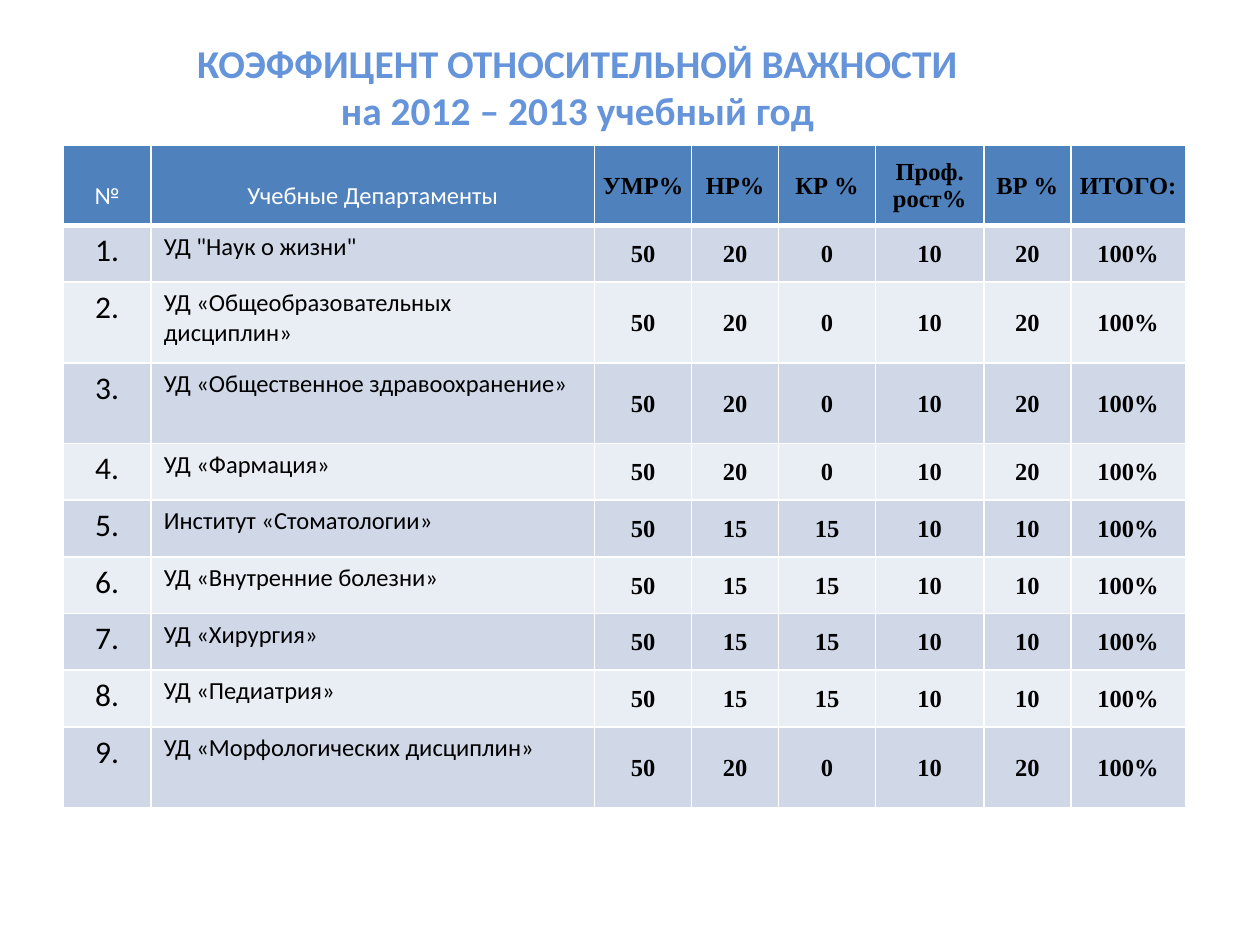
from lxml.etree import SubElement
from pptx import Presentation
from pptx.dml.color import RGBColor
from pptx.enum.text import MSO_ANCHOR, PP_ALIGN
from pptx.oxml.ns import qn
from pptx.util import Inches, Pt

TITLE_BLUE = RGBColor(0x65, 0x94, 0xDA)
HEADER_BLUE = RGBColor(0x4F, 0x81, 0xBD)
ODD_ROW = RGBColor(0xD0, 0xD8, 0xE8)
EVEN_ROW = RGBColor(0xE9, 0xED, 0xF4)
WHITE = RGBColor(0xFF, 0xFF, 0xFF)
BLACK = RGBColor(0, 0, 0)

TITLE_LINES = ["КОЭФФИЦЕНТ ОТНОСИТЕЛЬНОЙ ВАЖНОСТИ", "на 2012 – 2013 учебный год"]
HEADERS = ["№", "Учебные Департаменты", "УМР%", "НР%", "КР %", "Проф. рост%", "ВР %", "ИТОГО:"]
GENERAL = ["50", "20", "0", "10", "20", "100%"]
CLINICAL = ["50", "15", "15", "10", "10", "100%"]
DEPARTMENTS = [
    ("УД \"Наук о жизни\"", GENERAL),
    ("УД «Общеобразовательных дисциплин»", GENERAL),
    ("УД «Общественное здравоохранение»", GENERAL),
    ("УД «Фармация»", GENERAL),
    ("Институт «Стоматологии»", CLINICAL),
    ("УД «Внутренние болезни»", CLINICAL),
    ("УД «Хирургия»", CLINICAL),
    ("УД «Педиатрия»", CLINICAL),
    ("УД «Морфологических дисциплин»", GENERAL),
]
COLUMN_WIDTHS = [0.7, 3.52, 0.77, 0.69, 0.77, 0.86, 0.69, 0.91]
SHORT_ROW, TALL_ROW = 0.45, 0.64
TALL_ROWS = {0, 2, 3, 9}


def add_run(paragraph, text, size, color, font="Calibri", bold=False):
    run = paragraph.add_run()
    run.text = text
    run.font.size = Pt(size)
    run.font.name = font
    run.font.bold = bold
    run.font.color.rgb = color


def set_borders(cell, bottom_width):
    properties = cell._tc.get_or_add_tcPr()
    for side, width in (("L", 1), ("R", 1), ("T", 1), ("B", bottom_width)):
        line = SubElement(properties, qn(f"a:ln{side}"), w=str(Pt(width)))
        fill = SubElement(line, qn("a:solidFill"))
        SubElement(fill, qn("a:srgbClr"), val=str(WHITE))


def fill_cell(cell, text, row, column):
    is_header = row == 0
    is_value = column >= 2
    set_borders(cell, 3 if is_header else 1)
    cell.fill.solid()
    cell.fill.fore_color.rgb = HEADER_BLUE if is_header else ODD_ROW if row % 2 else EVEN_ROW
    paragraph = cell.text_frame.paragraphs[0]
    paragraph.alignment = PP_ALIGN.CENTER if is_header or column != 1 else PP_ALIGN.LEFT
    if is_value:
        cell.vertical_anchor = MSO_ANCHOR.MIDDLE
        cell.margin_left = cell.margin_right = cell.margin_top = Inches(0.01)
        cell.margin_bottom = 0
        add_run(paragraph, text, 14, BLACK, "Times New Roman", True)
    elif is_header:
        cell.margin_top = Inches(0.29)
        add_run(paragraph, text, 14, WHITE)
    else:
        add_run(paragraph, text, 18 if column == 0 else 14, BLACK)


def add_title(slide):
    title = slide.shapes.title
    title.left, title.top = Inches(0.5), Inches(0.3)
    title.width, title.height = Inches(8.17), Inches(0.77)
    title.text_frame.vertical_anchor = MSO_ANCHOR.MIDDLE
    paragraph = title.text_frame.paragraphs[0]
    paragraph.alignment = PP_ALIGN.CENTER
    for index, line in enumerate(TITLE_LINES):
        if index:
            paragraph.add_line_break()
        add_run(paragraph, line, 22.5, TITLE_BLUE, bold=True)


def add_coefficient_table(slide):
    rows = [HEADERS]
    for number, (department, values) in enumerate(DEPARTMENTS, 1):
        rows.append([f"{number}.", department, *values])
    heights = [TALL_ROW if row in TALL_ROWS else SHORT_ROW for row in range(len(rows))]
    table = slide.shapes.add_table(
        len(rows), len(HEADERS), Inches(0.5), Inches(1.15),
        Inches(sum(COLUMN_WIDTHS)), Inches(sum(heights)),
    ).table
    for column, width in zip(table.columns, COLUMN_WIDTHS):
        column.width = Inches(width)
    for row, texts in enumerate(rows):
        table.rows[row].height = Inches(heights[row])
        for column, text in enumerate(texts):
            fill_cell(table.cell(row, column), text, row, column)


def main():
    presentation = Presentation()
    presentation.slide_width = Inches(10)
    presentation.slide_height = Inches(7.5)
    slide = presentation.slides.add_slide(presentation.slide_layouts[5])
    add_title(slide)
    add_coefficient_table(slide)
    presentation.save("out.pptx")


if __name__ == "__main__":
    main()
